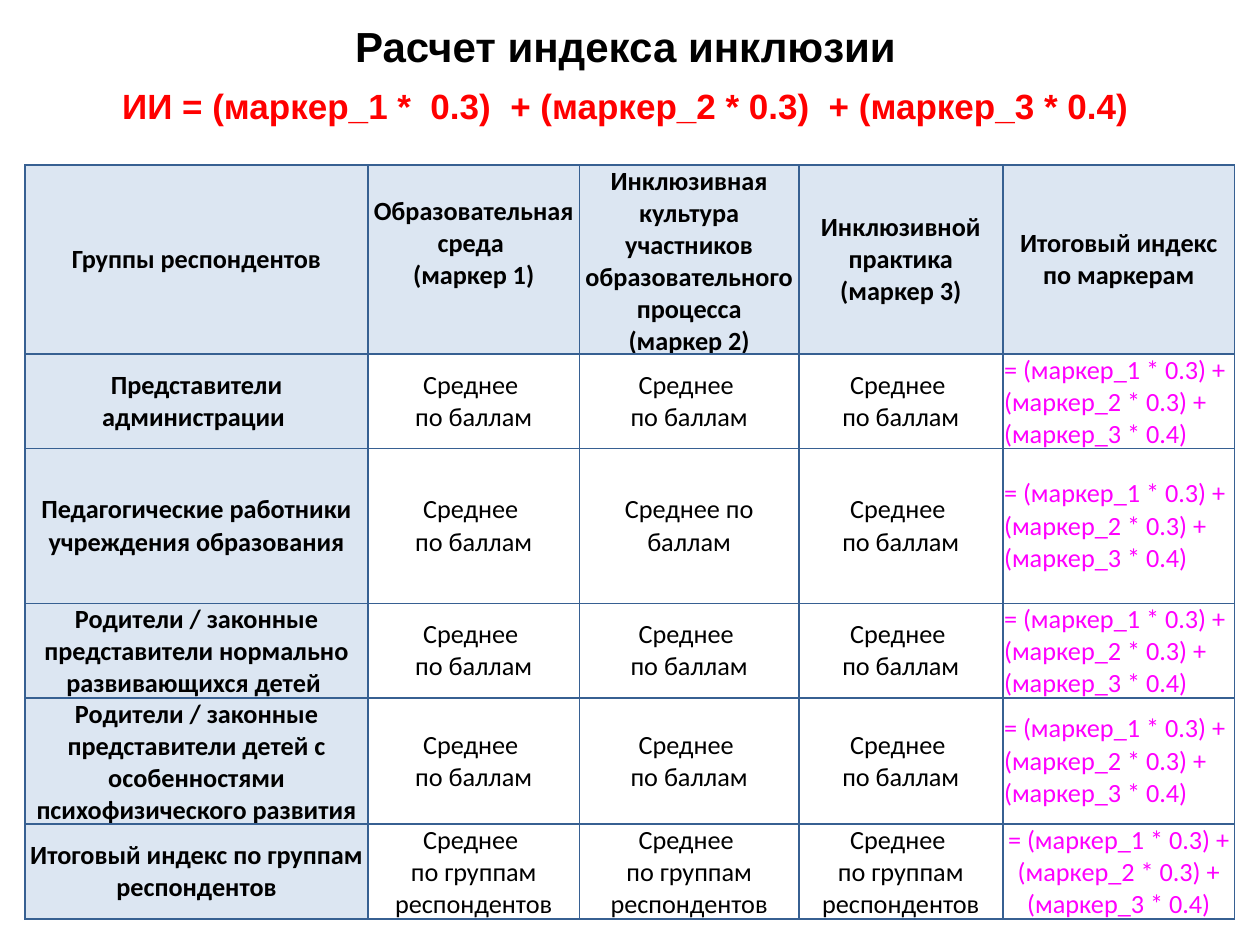
import dataclasses
import typing

import pptx
import pptx.dml.color
import pptx.enum.text
import pptx.oxml.ns
import pptx.util
from lxml import etree

Inches = pptx.util.Inches
Pt = pptx.util.Pt
RGB = pptx.dml.color.RGBColor
Align = pptx.enum.text.PP_ALIGN
Anchor = pptx.enum.text.MSO_ANCHOR

BLACK = RGB(0x00, 0x00, 0x00)
RED = RGB(0xFF, 0x00, 0x00)
PINK = RGB(0xFF, 0x00, 0xFF)
WHITE = RGB(0xFF, 0xFF, 0xFF)
PALE = RGB(0xDC, 0xE6, 0xF2)
BLUE = RGB(0x37, 0x60, 0x92)


@dataclasses.dataclass(frozen=True)
class Style:
    size: float
    font: str
    color: RGB
    bold: bool = False
    align: Align = Align.CENTER


@dataclasses.dataclass(frozen=True)
class Entry:
    lines: tuple[str, ...]
    style: Style
    fill: RGB = WHITE
    foot: float = 0


TITLE = Style(24, "Arial", BLACK, True)
RULE = Style(20, "Arial", RED, True)
HEAD = Style(15, "Calibri", BLACK, True)
BODY = Style(15, "Calibri", BLACK)
SUM = Style(15, "Calibri", PINK, align=Align.LEFT)
TOTAL = dataclasses.replace(SUM, align=Align.CENTER)

COLS = (2.72, 1.68, 1.74, 1.62, 1.84)
ROWS = (1.38, 0.74, 1.23, 0.69, 0.92, 0.69)
FORMULA = "= (маркер_1 * 0.3) + (маркер_2 * 0.3) + (маркер_3 * 0.4)"
MEAN = ("Среднее ", "по баллам")
GROUP = ("Среднее ", "по группам респондентов")


def write(para: typing.Any, text: str, style: Style) -> None:
    para.alignment = style.align
    for i, part in enumerate(text.split("\n")):
        if i:
            para.add_line_break()
        run = para.add_run()
        run.text = part
        run.font.size = Pt(style.size)
        run.font.name = style.font
        run.font.bold = style.bold
        run.font.color.rgb = style.color


def border(cell: typing.Any) -> None:
    props = cell._tc.get_or_add_tcPr()
    for i, side in enumerate(("lnL", "lnR", "lnT", "lnB")):
        line = etree.Element(pptx.oxml.ns.qn(f"a:{side}"), w=str(Pt(1)))
        fill = etree.SubElement(line, pptx.oxml.ns.qn("a:solidFill"))
        etree.SubElement(fill, pptx.oxml.ns.qn("a:srgbClr"), val=str(BLUE))
        props.insert(i, line)


def draw(cell: typing.Any, entry: Entry) -> None:
    cell.fill.solid()
    cell.fill.fore_color.rgb = entry.fill
    cell.vertical_anchor = Anchor.MIDDLE
    cell.margin_left = cell.margin_right = Inches(0.01)
    cell.margin_top = Inches(0)
    cell.margin_bottom = Inches(entry.foot)
    frame = cell.text_frame
    for i, line in enumerate(entry.lines):
        para = frame.add_paragraph() if i else frame.paragraphs[0]
        write(para, line, entry.style)
    border(cell)


def head(*lines: str, foot: float = 0) -> Entry:
    return Entry(lines, HEAD, PALE, foot)


def row(name: str, *means: tuple[str, ...], end: Style = SUM) -> list[Entry]:
    return [head(name), *(Entry(m, BODY) for m in means), Entry((FORMULA,), end)]


def title(slide: typing.Any) -> None:
    box = slide.shapes.add_textbox(Inches(0.28), Inches(0.21), Inches(9.37), Inches(1.02))
    frame = box.text_frame
    frame.word_wrap = True
    frame.vertical_anchor = Anchor.TOP
    frame.margin_top = Inches(0.09)
    top = frame.paragraphs[0]
    write(top, "Расчет индекса инклюзии", TITLE)
    rule = frame.add_paragraph()
    write(rule, "ИИ = (маркер_1 *  0.3)  + (маркер_2 * 0.3)  + (маркер_3 * 0.4)", RULE)
    rule.space_before = Pt(18)
    top.line_spacing = rule.line_spacing = 0.6


def grid(slide: typing.Any, data: list[list[Entry]]) -> None:
    shape = slide.shapes.add_table(
        len(ROWS), len(COLS), Inches(0.2), Inches(1.31), Inches(sum(COLS)), Inches(sum(ROWS))
    )
    table = shape.table
    for col, width in zip(table.columns, COLS):
        col.width = Inches(width)
    for line, height in zip(table.rows, ROWS):
        line.height = Inches(height)
    for line, items in zip(table.rows, data):
        for cell, entry in zip(line.cells, items):
            draw(cell, entry)


def main() -> None:
    deck = pptx.Presentation()
    deck.slide_width = Inches(10)
    deck.slide_height = Inches(7.5)
    slide = deck.slides.add_slide(deck.slide_layouts[6])
    title(slide)
    grid(slide, [
        [
            head("Группы респондентов"),
            head("Образовательная среда \n(маркер 1)", foot=0.25),
            head("Инклюзивная культура участников образовательного процесса", "(маркер 2)"),
            head("Инклюзивной практика", "(маркер 3)"),
            head("Итоговый индекс по маркерам"),
        ],
        row("Представители администрации ", MEAN, MEAN, MEAN),
        row("Педагогические работники учреждения образования",
            MEAN, ("Среднее по баллам",), MEAN),
        row("Родители / законные представители нормально развивающихся детей ",
            MEAN, MEAN, MEAN),
        row("Родители / законные представители детей с особенностями психофизического развития",
            MEAN, MEAN, MEAN),
        row("Итоговый индекс по группам респондентов", GROUP, GROUP, GROUP, end=TOTAL),
    ])
    deck.save("out.pptx")


if __name__ == "__main__":
    main()
